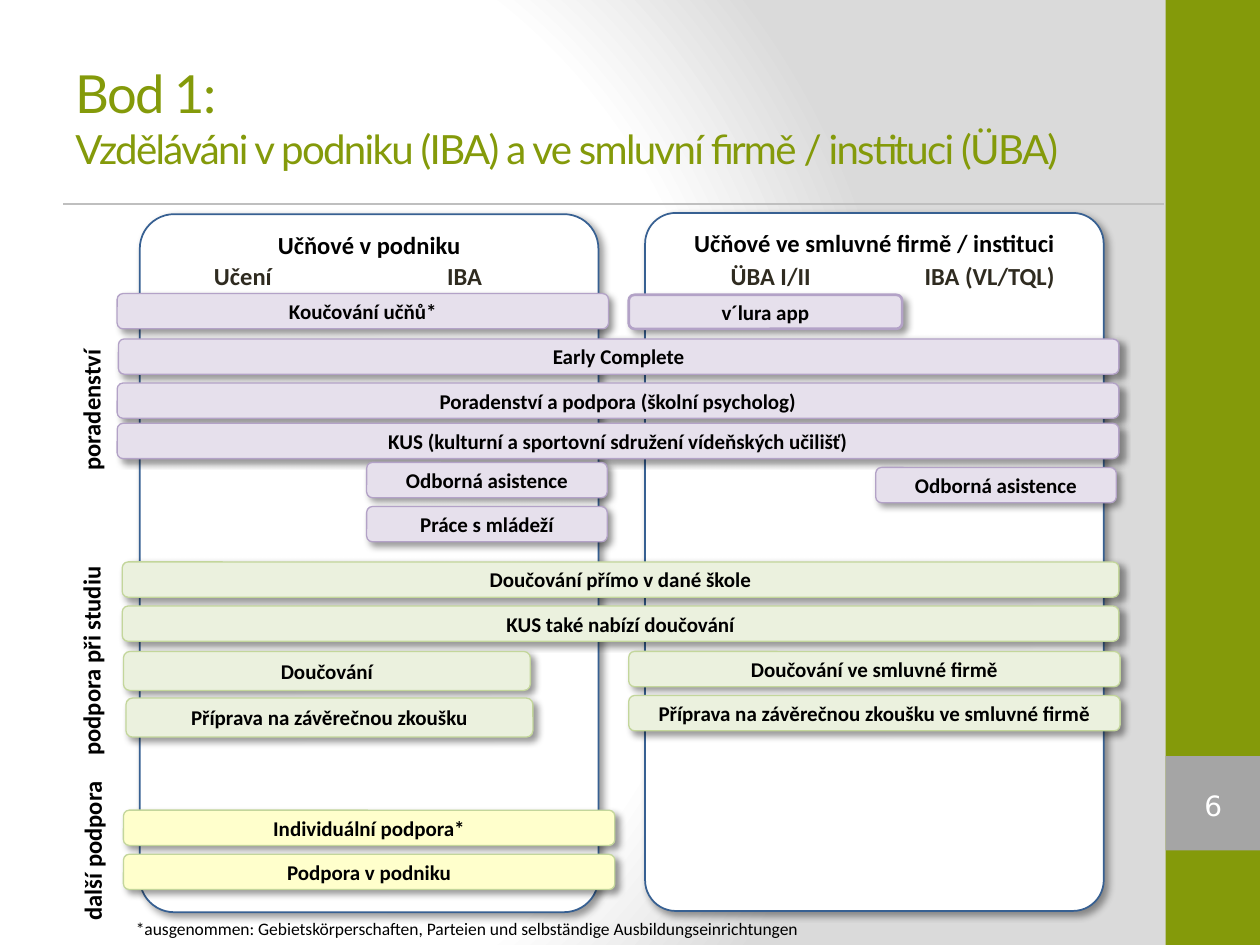
from dataclasses import dataclass
from typing import NamedTuple

from pptx import Presentation
from pptx.dml.color import RGBColor
from pptx.enum.shapes import MSO_CONNECTOR as Connector, MSO_SHAPE as Shape
from pptx.enum.text import MSO_ANCHOR as Anchor, MSO_AUTO_SIZE as AutoSize, PP_ALIGN as Align
from pptx.oxml import parse_xml
from pptx.oxml.ns import nsdecls
from pptx.util import Inches, Pt


@dataclass(frozen=True)
class Theme:
    font: str = "Calibri"
    title_font: str = "Lato"
    number_font: str = "DejaVu Sans"
    green: str = "849A0A"
    grey: str = "A5A5A5"
    rule: str = "BFBFBF"
    backdrop: str = "DADADA"
    white: str = "FFFFFF"
    black: str = "000000"
    brown: str = "2F2B20"
    navy: str = "376092"
    lilac: str = "E6E0EC"
    lilac_edge: str = "B3A2C7"
    mint: str = "EBF1DE"
    mint_edge: str = "C3D69B"
    yellow: str = "FFFFCC"
    title_size: float = 30
    subtitle_size: float = 23
    number_size: float = 16
    heading_size: float = 14
    bar_size: float = 12
    note_size: float = 10


THEME = Theme()


class Style(NamedTuple):
    fill: str
    edge: str


class Panel(NamedTuple):
    text: str
    left: float
    top: float
    corner: float


class Bar(NamedTuple):
    text: str
    left: float
    top: float
    width: float
    style: Style
    height: float = 0.28
    edge_width: float = 0.75


class Label(NamedTuple):
    text: str
    left: float
    top: float
    width: float
    color: str = THEME.brown
    rotation: float = 0


COUNSEL = Style(THEME.lilac, THEME.lilac_edge)
STUDY = Style(THEME.mint, THEME.mint_edge)
OTHER = Style(THEME.yellow, THEME.mint_edge)

PANELS = [
    Panel("Učňové ve smluvné firmě / instituci", 5.12, 1.69, 0.067),
    Panel("Učňové v podniku", 1.11, 1.7, 0.075),
]
BARS = [
    Bar("Koučování učňů*", 0.93, 2.33, 3.9, COUNSEL),
    Bar("v´lura app", 4.99, 2.34, 2.17, COUNSEL, 0.27, 1.5),
    Bar("Early Complete", 0.94, 2.69, 7.94, COUNSEL),
    Bar("Poradenství a podpora (školní psycholog)", 0.93, 3.04, 7.95, COUNSEL),
    Bar("KUS (kulturní a sportovní sdružení vídeňských učilišť)", 0.93, 3.36, 7.95, COUNSEL),
    Bar("Odborná asistence", 2.91, 3.67, 1.91, COUNSEL),
    Bar("Odborná asistence", 6.95, 3.71, 1.91, COUNSEL),
    Bar("Práce s mládeží", 2.91, 4.02, 1.91, COUNSEL),
    Bar("Doučování přímo v dané škole", 0.97, 4.46, 7.91, STUDY),
    Bar("KUS také nabízí doučování", 0.97, 4.81, 7.91, STUDY),
    Bar("Doučování", 0.98, 5.17, 3.23, STUDY, 0.31),
    Bar("Doučování ve smluvné firmě", 4.99, 5.17, 3.9, STUDY),
    Bar("Příprava na závěrečnou zkoušku", 1, 5.54, 3.23, STUDY, 0.31),
    Bar("Příprava na závěrečnou zkoušku ve smluvné firmě", 4.99, 5.52, 3.9, STUDY),
    Bar("Individuální podpora*", 0.98, 6.43, 3.9, OTHER),
    Bar("Podpora v podniku", 0.98, 6.78, 3.9, OTHER),
]
LABELS = [
    Label("Učení", 1.6, 2.02, 0.66),
    Label("IBA", 3.45, 2.02, 0.48),
    Label("ÜBA I/II", 5.7, 2.02, 0.84),
    Label("IBA (VL/TQL)", 7.24, 2.02, 1.24),
    Label("poradenství", 0.14, 3.08, 1.17, THEME.black, 270),
    Label("podpora při studiu", -0.13, 5.07, 1.71, THEME.black, 270),
    Label("další podpora", 0.08, 6.58, 1.31, THEME.black, 270),
]


def rgb(color: str) -> RGBColor:
    return RGBColor.from_string(color)


def add_span(para, text: str, *, size: float, color: str = THEME.black,
             font: str = THEME.font, bold: bool = False, spacing: float = 0):
    span = para.add_run()
    span.text = text
    span.font.size = Pt(size)
    span.font.name = font
    span.font.bold = bold
    span.font.color.rgb = rgb(color)
    if spacing:
        span.font._element.set("spc", str(int(spacing * 100)))


def add_box(page, left: float, top: float, width: float, height: float, *,
            fill: str | None = None, edge: str | None = None, edge_width: float = 1,
            kind=Shape.RECTANGLE, shadow: bool = False):
    box = page.shapes.add_shape(kind, Inches(left), Inches(top), Inches(width), Inches(height))
    box.shadow.inherit = False
    if fill:
        box.fill.solid()
        box.fill.fore_color.rgb = rgb(fill)
    else:
        box.fill.background()
    if edge:
        box.line.color.rgb = rgb(edge)
        box.line.width = Pt(edge_width)
    else:
        box.line.fill.background()
    if shadow:
        box._element.spPr.effectLst.append(parse_xml(
            f'<a:outerShdw {nsdecls("a")} blurRad="{Pt(4)}" dist="{Pt(3)}" dir="2700000" '
            f'algn="tl" rotWithShape="0"><a:srgbClr val="{THEME.black}">'
            '<a:alpha val="40000"/></a:srgbClr></a:outerShdw>'))
    return box


def centre_text(box, text: str, *, anchor=Anchor.MIDDLE, **style):
    box.text_frame.word_wrap = True
    box.text_frame.vertical_anchor = anchor
    para = box.text_frame.paragraphs[0]
    para.alignment = Align.CENTER
    add_span(para, text, **style)


def add_text_box(page, left: float, top: float, width: float, height: float, *,
                 wrap: bool = True, grow: bool = True):
    box = page.shapes.add_textbox(Inches(left), Inches(top), Inches(width), Inches(height))
    box.text_frame.word_wrap = wrap
    box.text_frame.auto_size = AutoSize.SHAPE_TO_FIT_TEXT if grow else AutoSize.NONE
    return box


def add_backdrop(page):
    stops = "".join(
        f'<a:gs pos="{place * 1000}"><a:srgbClr val="{color}"/></a:gs>'
        for place, color in [(0, THEME.white), (75, THEME.white), (100, THEME.backdrop)])
    page.element.cSld.insert(0, parse_xml(
        f'<p:bg {nsdecls("p", "a")}><p:bgPr><a:gradFill rotWithShape="1"><a:gsLst>{stops}</a:gsLst>'
        '<a:path path="circle"><a:fillToRect l="20000" t="50000" r="100000" b="50000"/></a:path>'
        '</a:gradFill><a:effectLst/></p:bgPr></p:bg>'))


def add_frame(page):
    add_backdrop(page)
    add_box(page, 9.25, 0, 0.75, 7.5, fill=THEME.green)
    add_box(page, 9.25, 6, 0.75, 0.75, fill=THEME.grey)
    rule = page.shapes.add_connector(
        Connector.STRAIGHT, Inches(0.5), Inches(1.62), Inches(9.24), Inches(1.62))
    rule.line.color.rgb = rgb(THEME.rule)
    rule.line.width = Pt(1.25)
    rule._element.spPr.append(parse_xml(f'<a:effectLst {nsdecls("a")}/>'))

    number = add_box(page, 9.33, 6.18, 0.6, 0.43, kind=Shape.DOUBLE_BRACKET)
    frame = number.text_frame
    frame.margin_left = frame.margin_right = frame.margin_top = frame.margin_bottom = 0
    centre_text(number, "6", size=THEME.number_size, font=THEME.number_font, color=THEME.white)


def add_title(page):
    title = add_text_box(page, 0.5, 0.3, 8.33, 1.25, grow=False)
    title.text_frame.vertical_anchor = Anchor.MIDDLE
    para = title.text_frame.paragraphs[0]
    look = dict(font=THEME.title_font, color=THEME.green, spacing=-1)
    add_span(para, "Bod 1:", size=THEME.title_size, **look)
    para.add_line_break()
    add_span(para, "Vzděláváni v podniku (IBA) a ve smluvní firmě / instituci (ÜBA)",
             size=THEME.subtitle_size, **look)


def add_panel(page, panel: Panel):
    box = add_box(page, panel.left, panel.top, 3.64, 5.54, fill=THEME.white,
                  edge=THEME.navy, kind=Shape.ROUNDED_RECTANGLE, shadow=True)
    box.adjustments[0] = panel.corner
    centre_text(box, panel.text, anchor=Anchor.TOP, size=THEME.heading_size, bold=True)


def add_bar(page, bar: Bar):
    box = add_box(page, bar.left, bar.top, bar.width, bar.height, fill=bar.style.fill,
                  edge=bar.style.edge, edge_width=bar.edge_width,
                  kind=Shape.ROUNDED_RECTANGLE, shadow=True)
    centre_text(box, bar.text, size=THEME.bar_size, bold=True)


def add_label(page, label: Label):
    box = add_text_box(page, label.left, label.top, label.width, 0.34, wrap=False)
    box.rotation = label.rotation
    add_span(box.text_frame.paragraphs[0], label.text,
             size=THEME.heading_size, color=label.color, bold=True)


def main():
    deck = Presentation()
    deck.slide_width, deck.slide_height = Inches(10), Inches(7.5)
    page = deck.slides.add_slide(deck.slide_layouts[6])
    add_frame(page)
    add_title(page)
    for draw, items in [(add_panel, PANELS), (add_bar, BARS), (add_label, LABELS)]:
        for item in items:
            draw(page, item)
    note = add_text_box(page, 0.98, 7.24, 5.53, 0.27)
    add_span(note.text_frame.paragraphs[0],
             "*ausgenommen: Gebietskörperschaften, Parteien und selbständige Ausbildungseinrichtungen",
             size=THEME.note_size)
    deck.save("out.pptx")


if __name__ == "__main__":
    main()
